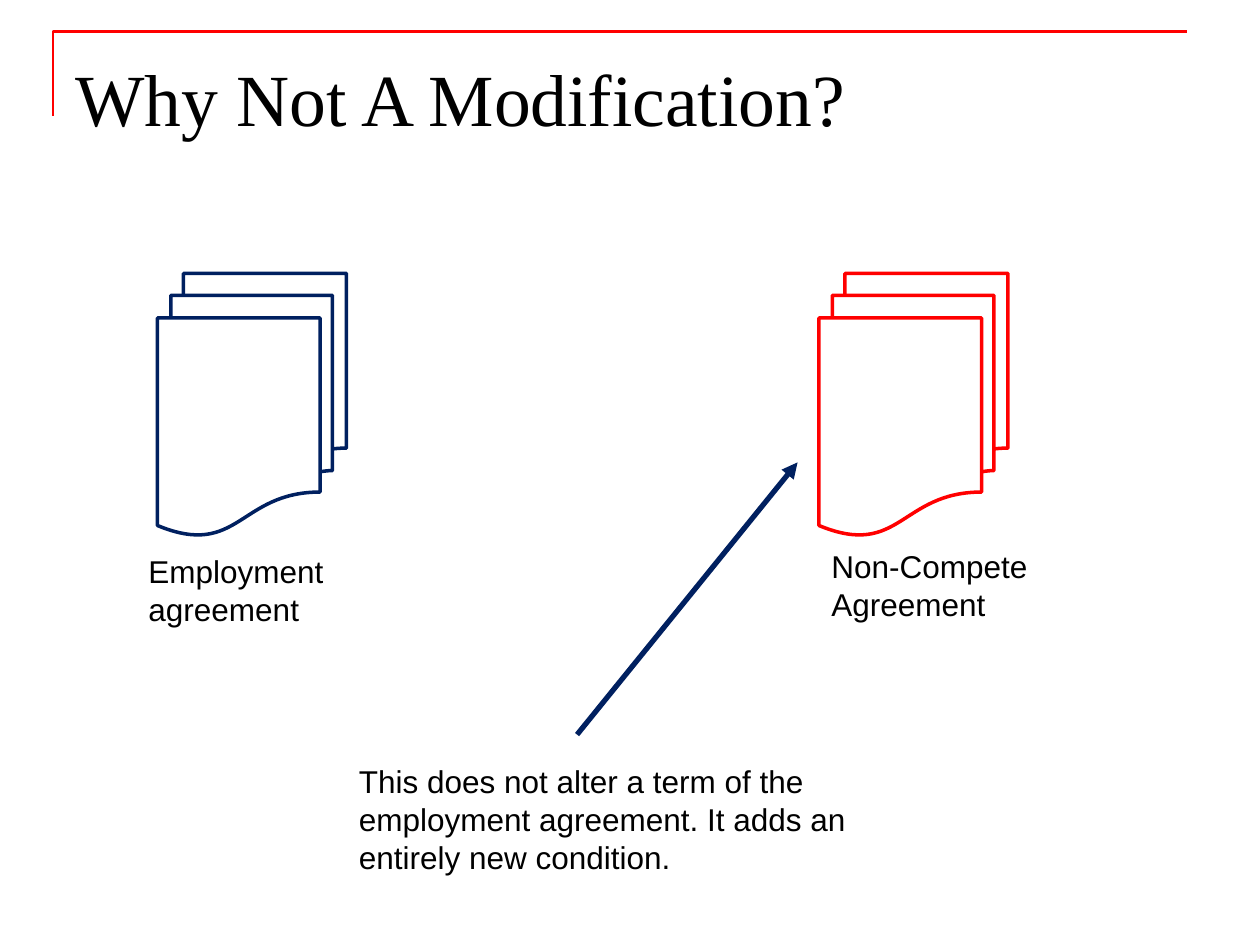
from dataclasses import dataclass

from pptx import Presentation
from pptx.dml.color import RGBColor
from pptx.enum import shapes, text
from pptx.oxml import parse_xml
from pptx.oxml.ns import nsdecls
from pptx.util import Inches, Pt


@dataclass(frozen=True)
class Theme:
    red: RGBColor = RGBColor(0xFF, 0x00, 0x00)
    navy: RGBColor = RGBColor(0x00, 0x20, 0x60)
    ink: RGBColor = RGBColor(0x00, 0x00, 0x00)
    title_font: str = "Times New Roman"
    body_font: str = "Arial"
    title_size: int = 42
    body_size: int = 18


class SlideBuilder:
    def __init__(self, s, theme):
        self.s, self.theme = s, theme

    def font(self, p, name, size):
        p.alignment = text.PP_ALIGN.LEFT
        p.font.name, p.font.size = name, Pt(size)
        p.font.color.rgb = self.theme.ink

    def outline(self, sp, color, width):
        sp.line.color.rgb, sp.line.width = color, Pt(width)

    def title(self, words, x, y, w, h):
        sp = self.s.shapes.title
        sp.left, sp.top, sp.width, sp.height = map(Inches, (x, y, w, h))
        tf = sp.text_frame
        tf.text = words
        tf.auto_size = text.MSO_AUTO_SIZE.NONE
        tf.vertical_anchor = text.MSO_ANCHOR.TOP
        tf.margin_top = Inches(0.12)
        self.font(tf.paragraphs[0], self.theme.title_font, self.theme.title_size)

    def bracket(self, x, y, w, h):
        fb = self.s.shapes.build_freeform(Inches(x), Inches(y + h))
        fb.add_line_segments([(Inches(x), Inches(y)), (Inches(x + w), Inches(y))],
                             close=False)
        sp = fb.convert_to_shape()
        sp.shadow.inherit = False
        sp.fill.background()
        self.outline(sp, self.theme.red, 1.5)

    def documents(self, x, y, w, h, color):
        sp = self.s.shapes.add_shape(shapes.MSO_SHAPE.FLOWCHART_MULTIDOCUMENT,
                                     *map(Inches, (x, y, w, h)))
        sp.shadow.inherit = False
        sp.fill.background()
        self.outline(sp, color, 2)

    def label(self, words, x, y, w, h):
        tf = self.s.shapes.add_textbox(*map(Inches, (x, y, w, h))).text_frame
        tf.word_wrap = True
        tf.auto_size = text.MSO_AUTO_SIZE.SHAPE_TO_FIT_TEXT
        tf.text = words
        self.font(tf.paragraphs[0], self.theme.body_font, self.theme.body_size)

    def arrow(self, x1, y1, x2, y2):
        cx = self.s.shapes.add_connector(shapes.MSO_CONNECTOR.STRAIGHT,
                                         *map(Inches, (x1, y1, x2, y2)))
        self.outline(cx, self.theme.navy, 3)
        cx.line._get_or_add_ln().append(
            parse_xml(f'<a:tailEnd {nsdecls("a")} type="triangle"/>'))
        cx._element.spPr.append(parse_xml(f'<a:effectLst {nsdecls("a")}/>'))


def main():
    prs = Presentation()
    prs.slide_width, prs.slide_height = Inches(10), Inches(7.5)
    theme = Theme()
    b = SlideBuilder(prs.slides.add_slide(prs.slide_layouts[5]), theme)

    # Heading with its corner rule
    b.bracket(0.42, 0.25, 9, 0.67)
    b.title("Why Not A Modification?", 0.5, 0.3, 9, 1.25)

    # The two agreements
    for x, color in ((1.25, theme.navy), (6.5, theme.red)):
        b.documents(x, 2.17, 1.5, 2.08, color)
    b.label("Employment agreement", 1.08, 4.33, 2.25, 0.71)
    b.label("Non-Compete Agreement", 6.5, 4.29, 2.25, 0.71)

    # Explanation pointing at the second agreement
    b.arrow(4.58, 5.83, 6.33, 3.67)
    b.label("This does not alter a term of the employment agreement. "
            "It adds an entirely new condition.", 2.75, 6, 4.42, 1.01)

    prs.save("out.pptx")


if __name__ == "__main__":
    main()
